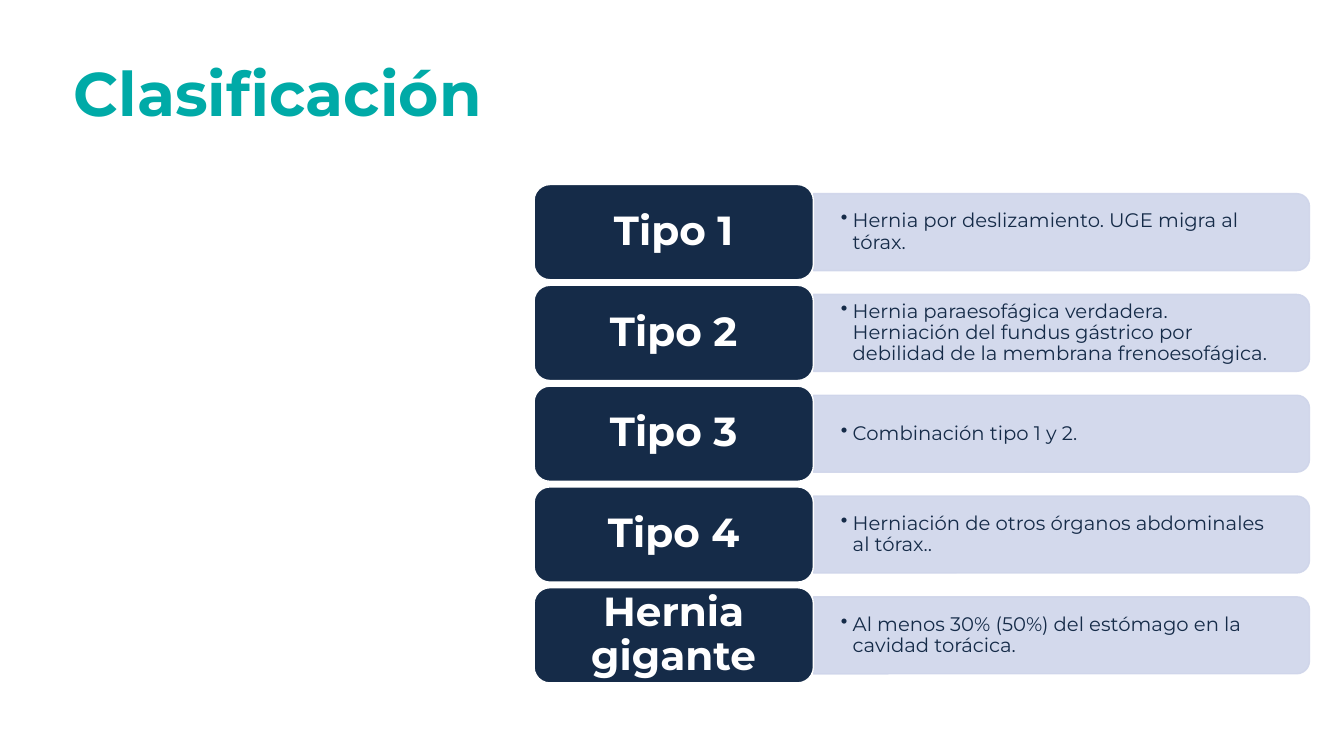
import pptx
import pptx.util
import pptx.dml.color
import pptx.enum.shapes
import pptx.enum.text
import pptx.oxml
import pptx.oxml.ns

Cm, Pt = pptx.util.Cm, pptx.util.Pt
RGBColor = pptx.dml.color.RGBColor
SHAPE = pptx.enum.shapes.MSO_SHAPE
ALIGN = pptx.enum.text.PP_ALIGN

TEAL = RGBColor(0x00, 0xAA, 0xA7)
NAVY = RGBColor(0x15, 0x2B, 0x48)
LAVENDER = RGBColor(0xCF, 0xD5, 0xEA)
WHITE = RGBColor(0xFF, 0xFF, 0xFF)
FONT = "Montserrat"

TYPES = [
    ("Tipo 1", "Hernia por deslizamiento. UGE migra al tórax."),
    ("Tipo 2", "Hernia paraesofágica verdadera. Herniación del fundus gástrico "
               "por debilidad de la membrana frenoesofágica."),
    ("Tipo 3", "Combinación tipo 1 y 2."),
    ("Tipo 4", "Herniación de otros órganos abdominales al tórax.."),
    ("Hernia gigante", "Al menos 30% (50%) del estómago en la cavidad torácica."),
]

# Row geometry in centimetres
FIRST_MIDDLE, PITCH = 5.85, 2.54
LABEL_LEFT, LABEL_W, LABEL_H = 13.46, 7.04, 2.4
PANEL_LEFT, PANEL_W, PANEL_H = 20.5, 12.5, 1.94
DETAIL_W, DETAIL_H = 12.42, 1.75


def add_bullet(p, indent):
    pPr = p._p.get_or_add_pPr()
    pPr.set("marL", str(indent))
    pPr.set("indent", str(-indent))
    bullet = pptx.oxml.parse_xml(
        f'<a:buChar {pptx.oxml.ns.nsdecls("a")} char="•"/>')
    pPr.append(bullet)


def set_text(sp, text, size, color, bold=False, align=ALIGN.LEFT,
             inset=(0.25, 0.13), bullet=False):
    tf = sp.text_frame
    tf.word_wrap = True
    tf.vertical_anchor = pptx.enum.text.MSO_ANCHOR.MIDDLE
    tf.margin_left = tf.margin_right = Cm(inset[0])
    tf.margin_top = tf.margin_bottom = Cm(inset[1])
    p = tf.paragraphs[0]
    if bullet:
        add_bullet(p, Cm(0.3))
    p.alignment = align
    p.line_spacing = 0.9
    r = p.add_run()
    r.text = text
    r.font.name = FONT
    r.font.size = Pt(size)
    r.font.bold = bold
    r.font.color.rgb = color


def add_text(s, text, left, top, width, height, **style):
    sp = s.shapes.add_textbox(Cm(left), Cm(top), Cm(width), Cm(height))
    set_text(sp, text, **style)


def add_box(s, kind, left, top, width, height, fill, line):
    sp = s.shapes.add_shape(kind, Cm(left), Cm(top), Cm(width), Cm(height))
    sp.shadow.inherit = False
    sp.fill.solid()
    sp.fill.fore_color.rgb = fill
    sp.line.color.rgb = line
    sp.line.width = Pt(1)
    return sp


def set_opacity(sp, percent):
    for color in sp._element.spPr.iter(pptx.oxml.ns.qn("a:srgbClr")):
        color.append(pptx.oxml.parse_xml(
            f'<a:alpha {pptx.oxml.ns.nsdecls("a")} val="{percent * 1000}"/>'))


def add_panel(s, middle):
    # Turned a quarter so that the two rounded corners face right
    center = PANEL_LEFT + PANEL_W / 2
    sp = add_box(s, SHAPE.ROUND_2_SAME_RECTANGLE, center - PANEL_H / 2,
                 middle - PANEL_W / 2, PANEL_H, PANEL_W, LAVENDER, LAVENDER)
    sp.rotation = 90
    set_opacity(sp, 90)


def add_row(s, label, detail, middle):
    add_panel(s, middle)
    add_text(s, detail, PANEL_LEFT, middle - DETAIL_H / 2, DETAIL_W, DETAIL_H,
             size=14, color=NAVY, inset=(0.69, 0.35), bullet=True)
    sp = add_box(s, SHAPE.ROUNDED_RECTANGLE, LABEL_LEFT, middle - LABEL_H / 2,
                 LABEL_W, LABEL_H, NAVY, WHITE)
    set_text(sp, label, size=29, color=WHITE, bold=True, align=ALIGN.CENTER,
             inset=(0.3, 0.15))


def main():
    prs = pptx.Presentation()
    prs.slide_width, prs.slide_height = Cm(33.87), Cm(19.05)
    s = prs.slides.add_slide(prs.slide_layouts[6])

    # Title
    add_text(s, "Clasificación", 1.6, 0.6, 29.21, 3.68,
             size=44, color=TEAL, bold=True)

    # One row for each type of hernia
    for i, (label, detail) in enumerate(TYPES):
        add_row(s, label, detail, FIRST_MIDDLE + i * PITCH)

    prs.save("out.pptx")


if __name__ == "__main__":
    main()
